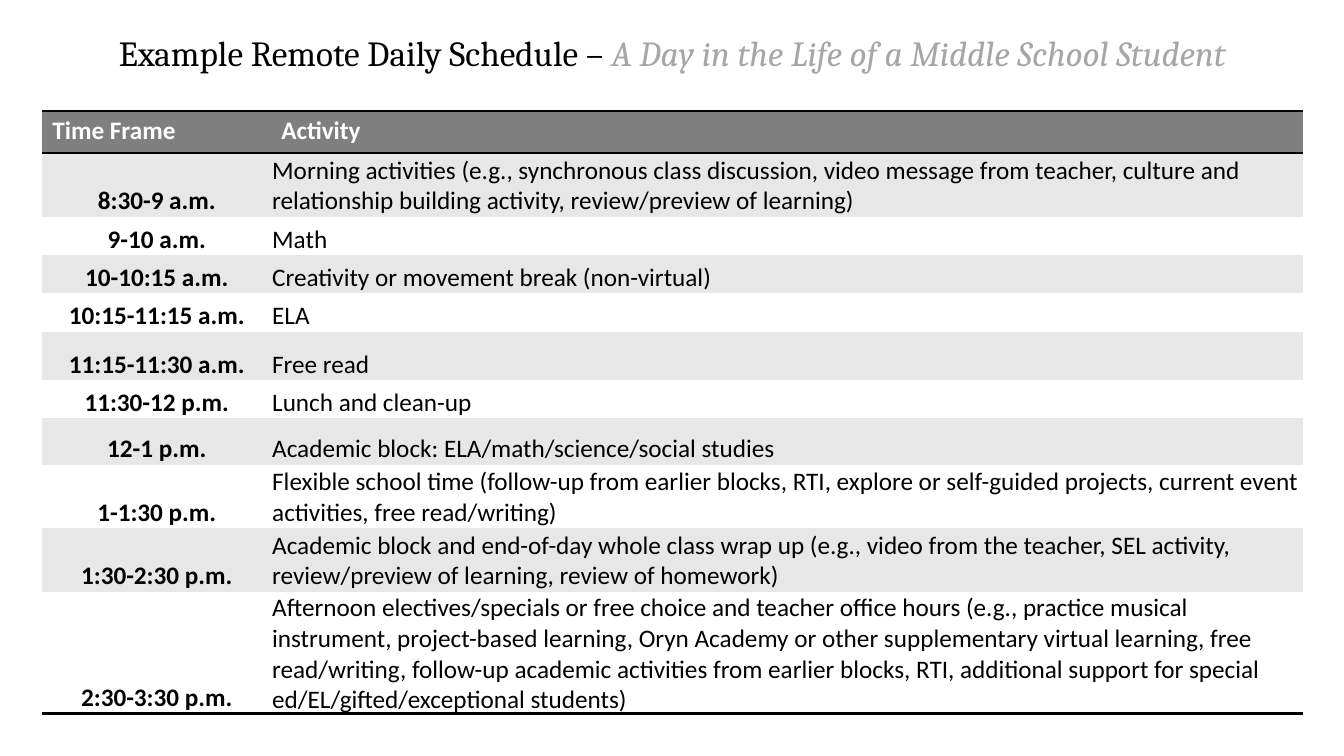
import pptx
import pptx.util
import pptx.dml.color
import pptx.enum.text
import pptx.oxml
import pptx.oxml.ns

Inches, Pt = pptx.util.Inches, pptx.util.Pt
RGBColor = pptx.dml.color.RGBColor
Align = pptx.enum.text.PP_ALIGN
Anchor = pptx.enum.text.MSO_ANCHOR

BLACK = RGBColor(0x00, 0x00, 0x00)
WHITE = RGBColor(0xFF, 0xFF, 0xFF)
SILVER = RGBColor(0xA6, 0xA6, 0xA6)
HEADER_GREY = RGBColor(0x7F, 0x7F, 0x7F)
BAND_GREY = RGBColor(0xE7, 0xE7, 0xE7)

SLIDE_SIZE = (13.33, 7.5)
TITLE_BOX = (0.92, 0.12, 11.5, 0.86)
TABLE_BOX = (0.42, 1.1, 12.5, 6)
COLUMNS = (2.27, 10.23)
ROWS = (0.42, 0.63, 0.38, 0.38, 0.38, 0.48, 0.38, 0.46, 0.63, 0.63, 0.94)
PLAIN_STYLE = "{2D5ABB26-0587-4C30-8999-92F81FD0307C}"

TITLE_FONT = {"name": "Cambria", "size": Pt(25.2)}
TABLE_FONT = {"name": "Calibri", "size": Pt(18)}
BODY_CELL = {"vertical_anchor": Anchor.BOTTOM, "margin_left": Inches(0.01),
             "margin_right": Inches(0.01), "margin_top": Inches(0.01),
             "margin_bottom": 0}

TITLE = (("Example Remote Daily Schedule – ", BLACK, False),
         ("A Day in the Life of a Middle School Student", SILVER, True))
SCHEDULE = (
    ("Time Frame", "Activity"),
    ("8:30-9 a.m.", "Morning activities (e.g., synchronous class discussion, video message "
     "from teacher, culture and relationship building activity, review/preview of learning)"),
    ("9-10 a.m.", "Math"),
    ("10-10:15 a.m.", "Creativity or movement break (non-virtual)"),
    ("10:15-11:15 a.m.", "ELA"),
    ("11:15-11:30 a.m.", "Free read"),
    ("11:30-12 p.m.", "Lunch and clean-up"),
    ("12-1 p.m.", "Academic block: ELA/math/science/social studies"),
    ("1-1:30 p.m.", "Flexible school time (follow-up from earlier blocks, RTI, explore or "
     "self-guided projects, current event\nactivities, free read/writing)"),
    ("1:30-2:30 p.m.", "Academic block and end-of-day whole class wrap up (e.g., video from "
     "the teacher, SEL activity, review/preview of learning, review of homework)"),
    ("2:30-3:30 p.m.", "Afternoon electives/specials or free choice and teacher office hours "
     "(e.g., practice musical instrument, project-based learning, Oryn Academy or other "
     "supplementary virtual learning, free read/writing, follow-up academic activities from "
     "earlier blocks, RTI, additional support for special ed/EL/gifted/exceptional students)"),
)


def apply(target, values):
    for name, value in values.items():
        setattr(target, name, value)


def add_span(para, text, color, **font):
    span = para.add_run()
    span.text = text
    apply(span.font, font)
    span.font.color.rgb = color


def add_title(page, box):
    shape = page.shapes.add_textbox(*map(Inches, box))
    frame = shape.text_frame
    apply(frame, {"word_wrap": True, "vertical_anchor": Anchor.MIDDLE})
    para = frame.paragraphs[0]
    apply(para, {"alignment": Align.CENTER, "line_spacing": 0.9})
    for text, color, italic in TITLE:
        add_span(para, text, color, italic=italic, **TITLE_FONT)


def add_border(cell, side):
    line = pptx.oxml.parse_xml(
        f'<a:{side} {pptx.oxml.ns.nsdecls("a")} w="{Pt(2)}">'
        f'<a:solidFill><a:srgbClr val="{BLACK}"/></a:solidFill></a:{side}>')
    cell._tc.get_or_add_tcPr().append(line)


def fill_cell(cell, text, row, column):
    header = row == 0
    # Rules go in ahead of the fill, as the schema requires
    if header:
        add_border(cell, "lnT")
    if header or row == len(SCHEDULE) - 1:
        add_border(cell, "lnB")
    cell.fill.solid()
    cell.fill.fore_color.rgb = HEADER_GREY if header else (WHITE, BAND_GREY)[row % 2]
    if not header:
        apply(cell, BODY_CELL)
    for index, line in enumerate(text.split("\n")):
        frame = cell.text_frame
        para = frame.add_paragraph() if index else frame.paragraphs[0]
        para.alignment = Align.LEFT if header or column else Align.CENTER
        add_span(para, line, WHITE if header else BLACK,
                 bold=header or column == 0, **TABLE_FONT)


def add_schedule(page, box):
    frame = page.shapes.add_table(len(ROWS), len(COLUMNS), *map(Inches, box))
    table = frame.table
    table._tbl.tblPr.find(pptx.oxml.ns.qn("a:tableStyleId")).text = PLAIN_STYLE
    for column, width in zip(table.columns, COLUMNS):
        column.width = Inches(width)
    for row, height in zip(table.rows, ROWS):
        row.height = Inches(height)
    for row, texts in enumerate(SCHEDULE):
        for column, text in enumerate(texts):
            fill_cell(table.cell(row, column), text, row, column)


def main():
    deck = pptx.Presentation()
    deck.slide_width, deck.slide_height = map(Inches, SLIDE_SIZE)
    page = deck.slides.add_slide(deck.slide_layouts[6])
    add_title(page, TITLE_BOX)
    add_schedule(page, TABLE_BOX)
    deck.save("out.pptx")


if __name__ == "__main__":
    main()
